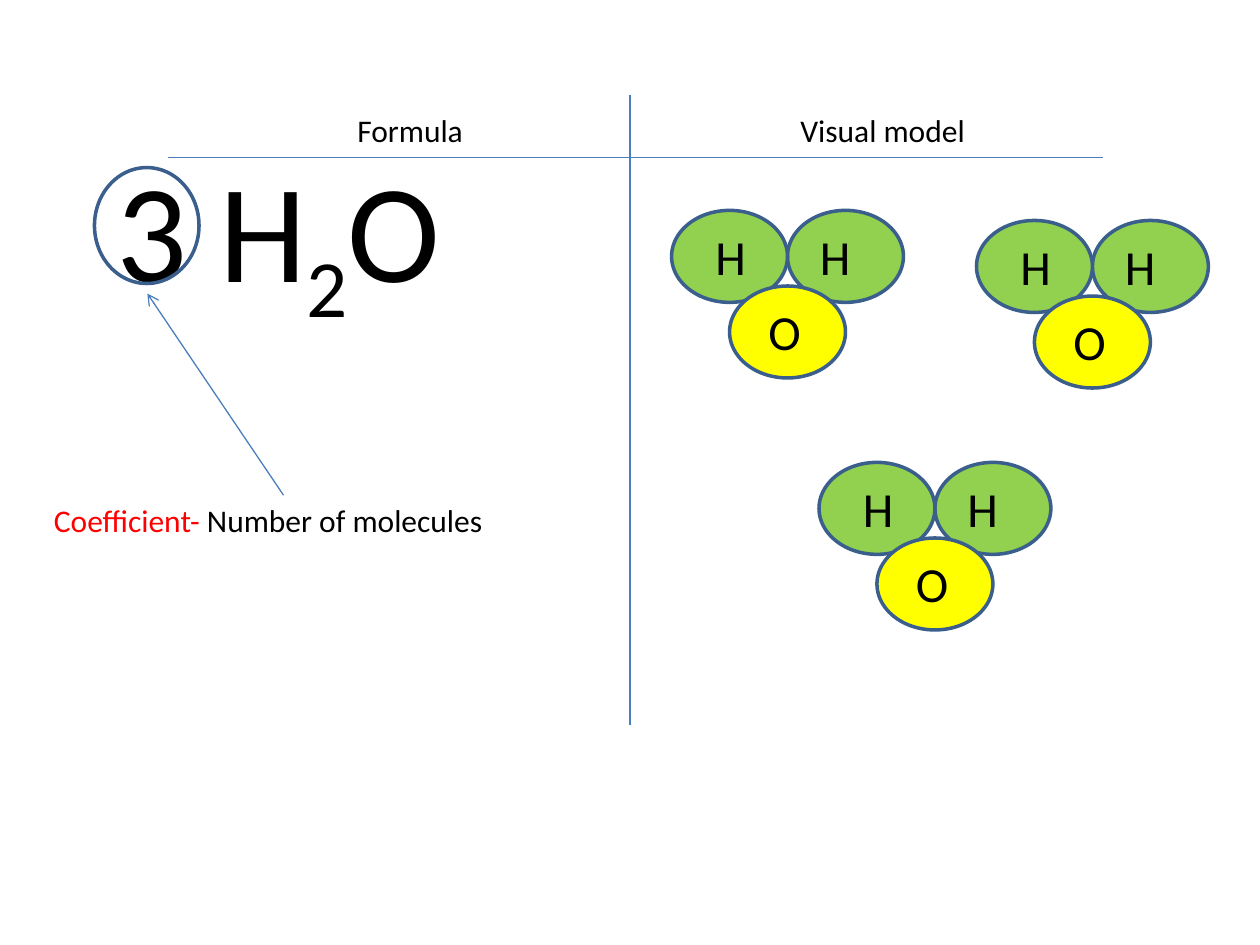
import pptx
import pptx.util
import pptx.dml.color
import pptx.enum.shapes
import pptx.enum.text
import pptx.oxml
import pptx.oxml.ns
from lxml import etree

Inches = pptx.util.Inches
Pt = pptx.util.Pt
FONT = "Calibri"
COLORS = {"text": "000000", "key": "FF0000", "rim": "3A5F8C",
          "rule": "4B7EBC", "H": "92D050", "O": "FFFF00"}

# Content: runs are (text, color name, baseline percent)
HEADS = [("Formula", 1.67), ("Visual model", 5.42)]
FORMULA = [("3 H", "text", 0), ("2", "text", -25), ("O", "text", 0)]
NOTE = [("Coefficient-", "key", 0), (" Number of molecules", "text", 0)]
RULES = [((1.33, 1.25), (8.75, 1.25)), ((5, 0.75), (5, 5.75))]
ARROW = ((1.17, 2.33), (2.25, 3.93))

# Molecules: left and top of each, then atoms and letters relative to it
SPOTS = [(5.33, 1.67), (7.75, 1.75), (6.5, 3.67)]
ATOM = (0.92, 0.73)
ATOMS = [("H", ATOM[0], 0), ("H", 0, 0), ("O", ATOM[0] / 2, 0.6)]
LETTERS = [("H", 0.25, 0.08), ("H", 1.08, 0.08), ("O", 0.67, 0.67)]

prs = pptx.Presentation()
prs.slide_width, prs.slide_height = Inches(10), Inches(7.5)
slide = prs.slides.add_slide(prs.slide_layouts[6])
shapes = slide.shapes


def rgb(name):
    return pptx.dml.color.RGBColor.from_string(COLORS[name])


def add_text(text, x, y, w, h, size=18, center=False):
    runs = [(text, "text", 0)] if isinstance(text, str) else text
    box = shapes.add_textbox(Inches(x), Inches(y), Inches(w), Inches(h))
    frame = box.text_frame
    frame.word_wrap = True
    frame.auto_size = pptx.enum.text.MSO_AUTO_SIZE.SHAPE_TO_FIT_TEXT
    para = frame.paragraphs[0]
    if center:
        para.alignment = pptx.enum.text.PP_ALIGN.CENTER
    for words, color, base in runs:
        run = para.add_run()
        run.text = words
        run.font.name = FONT
        run.font.size = Pt(size)
        run.font.color.rgb = rgb(color)
        if base:
            run._r.get_or_add_rPr().set("baseline", str(base * 1000))


def add_oval(x, y, w, h, fill=None):
    oval = shapes.add_shape(pptx.enum.shapes.MSO_SHAPE.OVAL,
                            Inches(x), Inches(y), Inches(w), Inches(h))
    oval.shadow.inherit = False
    if fill:
        oval.fill.solid()
        oval.fill.fore_color.rgb = rgb(fill)
    else:
        oval.fill.background()
    oval.line.color.rgb = rgb("rim")
    oval.line.width = Pt(2)


def add_line(start, end, arrow=False):
    line = shapes.add_connector(pptx.enum.shapes.MSO_CONNECTOR.STRAIGHT,
                                *map(Inches, start + end))
    line.line.color.rgb = rgb("rule")
    line.line.width = Pt(0.75)
    qn = pptx.oxml.ns.qn
    props = line._element.spPr
    if arrow:
        etree.SubElement(props.find(qn("a:ln")), qn("a:headEnd"), type="arrow")
    etree.SubElement(props, qn("a:effectLst"))


# Formula with its circled coefficient
add_text(FORMULA, 0.83, 1.08, 4.08, 1.75, size=80)
add_oval(0.75, 1.33, 0.83, 0.92)
add_line(*ARROW, arrow=True)

# Column rules, headings and note
for rule in RULES:
    add_line(*rule)
for head, x in HEADS:
    add_text(head, x, 0.83, 3.17, 0.4, center=True)
add_text(NOTE, 0.33, 3.93, 3.83, 0.4)

# Water molecules
for left, top in SPOTS:
    for atom, dx, dy in ATOMS:
        add_oval(left + dx, top + dy, *ATOM, fill=atom)
    for letter, dx, dy in LETTERS:
        add_text(letter, left + dx, top + dy, 0.5, 0.57, size=28)

prs.save("out.pptx")
